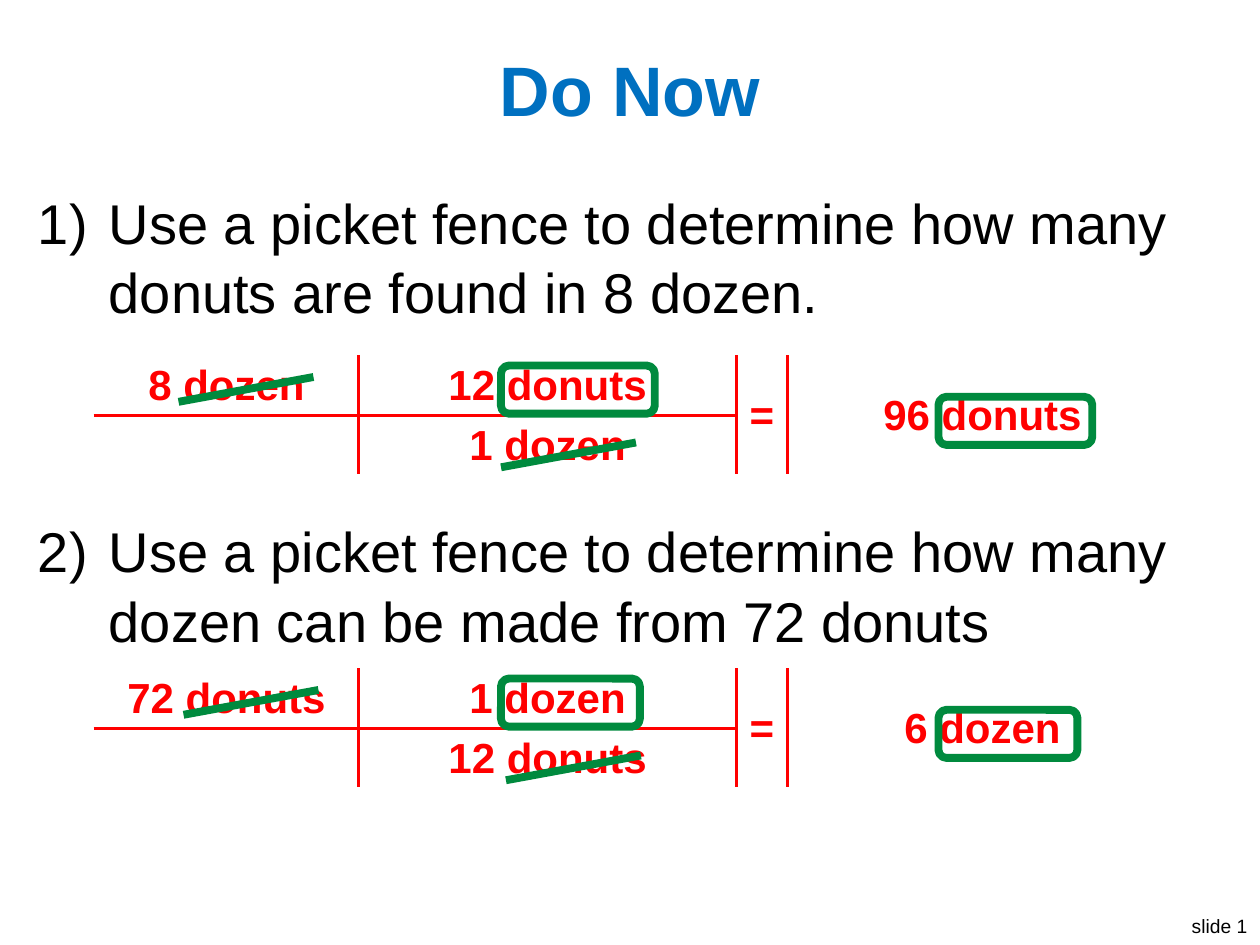
from dataclasses import dataclass

from lxml import etree
from pptx import Presentation
from pptx.dml.color import RGBColor
from pptx.enum.shapes import MSO_CONNECTOR, MSO_SHAPE
from pptx.enum.text import MSO_ANCHOR, MSO_AUTO_SIZE, PP_ALIGN
from pptx.oxml.ns import qn
from pptx.util import Cm, Pt

LEFT, CENTER, RIGHT = PP_ALIGN.LEFT, PP_ALIGN.CENTER, PP_ALIGN.RIGHT
TOP, MIDDLE = MSO_ANCHOR.TOP, MSO_ANCHOR.MIDDLE
STRAIGHT = MSO_CONNECTOR.STRAIGHT
ROUNDED = MSO_SHAPE.ROUNDED_RECTANGLE
NO_FIT = MSO_AUTO_SIZE.NONE


@dataclass(frozen=True)
class Theme:
    font: str = "Arial"
    title: str = "0070C0"
    body: str = "000000"
    fence: str = "FF0000"
    mark: str = "008A3E"
    title_size: float = 40
    body_size: float = 32
    fence_size: float = 24
    footer_size: float = 11
    fence_line: float = 2.25
    mark_line: float = 4.5


@dataclass(frozen=True)
class Box:
    left: float
    top: float
    width: float
    height: float

    def inner(self, left, top, width, height):
        return Box(self.left + left, self.top + top, width, height)

    def lengths(self):
        return Cm(self.left), Cm(self.top), Cm(self.width), Cm(self.height)


THEME = Theme()
COLUMNS = (5.33, 7.62, 1.02, 7.87)
ROW_HEIGHT = 1.2
STRIKE_WIDTH, STRIKE_RISE = 2.72, 0.5
QUESTIONS = (
    "Use a picket fence to determine how many donuts are found in 8 dozen.",
    "Use a picket fence to determine how many dozen can be made from 72 donuts",
)


def write(para, text, size, color, bold=False, align=LEFT):
    para.alignment = align
    span = para.add_run()
    span.text = text
    span.font.name = THEME.font
    span.font.size = Pt(size)
    span.font.bold = bold
    span.font.color.rgb = RGBColor.from_string(color)


def place(shape, box):
    shape.left, shape.top, shape.width, shape.height = box.lengths()


def add_title(page, box, text):
    title = page.shapes.title
    place(title, box)
    title.text_frame.vertical_anchor = MIDDLE
    title.text_frame.auto_size = NO_FIT
    write(title.text_frame.paragraphs[0], text, THEME.title_size,
          THEME.title, bold=True, align=CENTER)


def add_questions(page, box, questions):
    body = page.placeholders[1]
    place(body, box)
    frame = body.text_frame
    frame.auto_size = NO_FIT
    frame.vertical_anchor = TOP
    for index, question in enumerate(questions):
        para = frame.add_paragraph() if index else frame.paragraphs[0]
        para.space_before = Pt(108 if index else 12)
        para.line_spacing = 1.04
        write(para, question, THEME.body_size, THEME.body)
        properties = para._p.get_or_add_pPr()
        properties.set("marL", str(Cm(1.43)))
        properties.set("indent", str(-Cm(1.43)))
        etree.SubElement(properties, qn("a:buFont"), typeface="+mj-lt")
        etree.SubElement(properties, qn("a:buAutoNum"), type="arabicParenR")


def add_border(cell, side):
    line = etree.SubElement(cell._tc.get_or_add_tcPr(), qn("a:ln" + side),
                            w=str(Pt(THEME.fence_line)))
    fill = etree.SubElement(line, qn("a:solidFill"))
    etree.SubElement(fill, qn("a:srgbClr"), val=THEME.fence)


def add_table(page, box, rows):
    table = page.shapes.add_table(2, len(COLUMNS), *box.lengths()).table
    table.first_row = table.horz_banding = False
    for column, width in zip(table.columns, COLUMNS):
        column.width = Cm(width)
    for row in table.rows:
        row.height = Cm(ROW_HEIGHT)
    for column in (2, 3):
        table.cell(0, column).merge(table.cell(1, column))
    sides = (("R",), ("L", "R"), ("L",), ())
    for r, row in enumerate(rows):
        for c, text in enumerate(row):
            cell = table.cell(r, c)
            for side in sides[c]:
                add_border(cell, side)
            if c < 2:
                add_border(cell, "T" if r else "B")
            cell.fill.background()
            cell.vertical_anchor = MIDDLE
            cell.margin_top = cell.margin_bottom = Cm(0.1)
            if text:
                write(cell.text_frame.paragraphs[0], text, THEME.fence_size,
                      THEME.fence, bold=True, align=CENTER)


def style_mark(shape):
    shape.line.color.rgb = RGBColor.from_string(THEME.mark)
    shape.line.width = Pt(THEME.mark_line)


def add_strike(page, box):
    left, top, width, height = box.lengths()
    strike = page.shapes.add_connector(STRAIGHT, left, top + height,
                                       left + width, top)
    style_mark(strike)
    etree.SubElement(strike._element.spPr, qn("a:effectLst"))


def add_ring(page, box):
    ring = page.shapes.add_shape(ROUNDED, *box.lengths())
    ring.shadow.inherit = False
    ring.fill.background()
    style_mark(ring)


def add_fence(page, box, rows, ring_width, strike_shift=0):
    add_table(page, box, rows)
    for left, top in ((1.7, 0.42), (8.2, 1.74)):
        add_strike(page, box.inner(left + strike_shift, top,
                                   STRIKE_WIDTH, STRIKE_RISE))
    for left, top in ((8.2, 0.19), (17.02, 0.82)):
        add_ring(page, box.inner(left, top, ring_width, 0.97))


def add_footer(page, box, text):
    frame = page.shapes.add_textbox(*box.lengths()).text_frame
    frame.word_wrap = False
    write(frame.paragraphs[0], text, THEME.footer_size, THEME.body, align=RIGHT)


def main():
    deck = Presentation()
    deck.slide_width, deck.slide_height = Cm(25.4), Cm(19.05)
    page = deck.slides.add_slide(deck.slide_layouts[1])
    add_title(page, Box(0.51, 0.76, 24.38, 2.03), "Do Now")
    add_questions(page, Box(0.51, 3.61, 24.38, 14.25), QUESTIONS)
    fence = Box(1.9, 7.18, sum(COLUMNS), 2 * ROW_HEIGHT)
    add_fence(page, fence,
              (("8 dozen", "12 donuts", "=", "96 donuts"),
               ("", "1 dozen", "", "")), ring_width=3.1)
    add_fence(page, fence.inner(0, 6.31, fence.width, fence.height),
              (("72 donuts", "1 dozen", "=", "6 dozen"),
               ("", "12 donuts", "", "")), ring_width=2.8, strike_shift=0.1)
    add_footer(page, Box(23.5, 18.31, 1.9, 0.74), "slide 1")
    deck.save("out.pptx")


if __name__ == "__main__":
    main()
